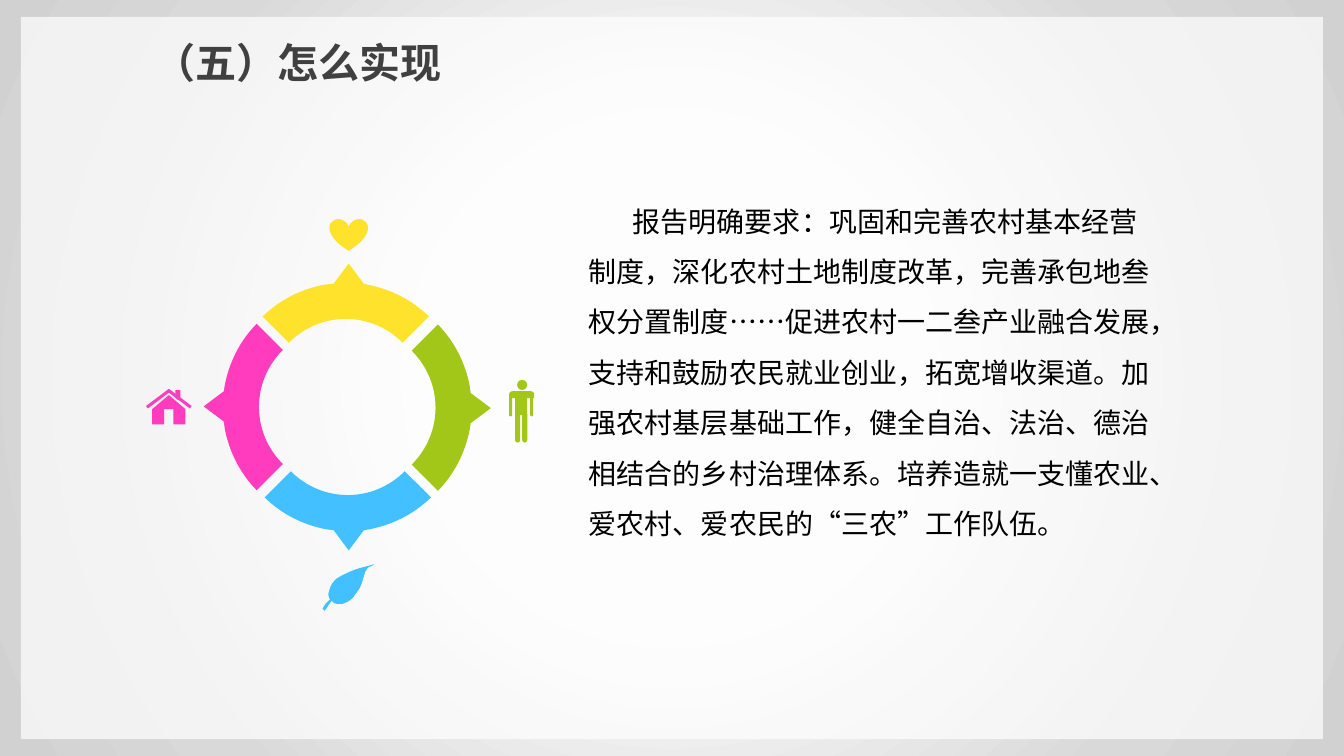
"""Build the rural policy slide: a four-part ring with icons beside a paragraph."""
from lxml import etree
from pptx import Presentation
from pptx.dml.color import RGBColor
from pptx.enum.shapes import MSO_SHAPE
from pptx.oxml import parse_xml
from pptx.oxml.ns import nsdecls, qn
from pptx.util import Pt

RECT = MSO_SHAPE.RECTANGLE
OVAL = MSO_SHAPE.OVAL
HEART = MSO_SHAPE.HEART
TRIANGLE = MSO_SHAPE.ISOSCELES_TRIANGLE
ROUNDED_TOP = MSO_SHAPE.ROUND_2_SAME_RECTANGLE
SNIPPED = MSO_SHAPE.SNIP_1_RECTANGLE

COLORS = {
    "yellow": "FFE22C", "green": "A3C718", "blue": "42C0FF", "pink": "FF3BBE",
    "white": "FFFFFF", "title": "404040", "body": "000000",
}
BACKDROP_STOPS = [(30, "FBFBFB"), (74, "D9D9D9"), (100, "D1D1D1")]
SLIDE_WIDTH, SLIDE_HEIGHT = 960, 540

RING = [
    ("green", (248.4, 291.2), (1, 0), 0.3),
    ("pink", (247.7, 290.7), (-1, 0), 0.4),
    ("blue", (248.4, 290.9), (0, 1), -0.7),
    ("yellow", (247, 290.5), (0, -1), 2.1),
]
PERSON = [
    (OVAL, (369.4, 271.4, 7.2, 7.2), 0),
    (ROUNDED_TOP, (363.6, 279.4, 18, 5), 0),
    (RECT, (367.9, 284.4, 8.6, 12.2), 0),
    (ROUNDED_TOP, (367.9, 295.9, 3.6, 20.2), 180),
    (ROUNDED_TOP, (373, 295.9, 3.6, 20.2), 180),
    (ROUNDED_TOP, (363.6, 283, 2.2, 14.4), 180),
    (ROUNDED_TOP, (378.7, 283, 2.2, 14.4), 180),
]
HOUSE = [
    (RECT, (103, 283.7, 20.2, 2.2), 323),
    (RECT, (118.1, 283.7, 20.2, 2.2), 37),
    (TRIANGLE, (108.7, 282.2, 23.8, 10.1), 0),
    (RECT, (108.7, 292.3, 8.6, 10.8), 0),
    (RECT, (123.8, 292.3, 8.6, 10.8), 0),
    (SNIPPED, (125.3, 278.6, 3.6, 7.2), 180),
]
LEAF_EDGE = [
    ((267.8, 403.2), (264.2, 404.6), (262.8, 405.4)),
    ((262.1, 406.1), (262.1, 406.1), (260.6, 409)),
    ((259.9, 411.1), (258.5, 416.9), (257, 419.8)),
    ((254.9, 422.6), (253.4, 425.5), (251.3, 427.7)),
]
LEAF_TIP = ((258.5, 405.4), (265, 403.9), (267.1, 403.2))
LEAF_BLADE = [
    ((235.4, 427.7),),
    ((234.7, 425.5), (234, 424.8), (235.4, 421.2)),
    ((236.2, 417.6), (238.3, 415.4), (240.5, 413.3)),
    ((242.6, 411.8), (249.8, 408.2), (254.2, 406.8)),
    LEAF_TIP,
    *LEAF_EDGE,
    ((249.1, 429.1), (246.2, 430.6), (244.1, 431.3)),
    ((241.9, 432), (239.8, 431.3), (238.3, 430.6)),
    ((236.9, 429.8), (236.2, 429.1), (235.4, 427.7)),
]
LEAF_STEM = [
    ((237.6, 427.7),),
    ((237.6, 428.4), (234.7, 432), (234, 433.4)),
    ((232.6, 434.9), (232.6, 436.3), (231.8, 436.3)),
    ((231.1, 436.3), (230.4, 435.6), (230.4, 434.9)),
    ((230.4, 434.2), (231.8, 432.7), (232.6, 431.3)),
    ((234, 429.8), (236.2, 427.7), (236.9, 427)),
    ((237.6, 427), (238.3, 426.2), (237.6, 427.7)),
]
LEAF_HALF = [
    ((267.1, 403.2),),
    *LEAF_EDGE,
    ((248.4, 429.8),), ((244.8, 431.3),), ((241.9, 431.3),),
    ((248.4, 409.7),), ((250.6, 408.2),),
    ((252, 407.5), (253.4, 407.5), (254.2, 406.8)),
    LEAF_TIP,
]
LEAF_VEIN = [
    ((236.2, 427),),
    ((237.6, 425.5), (241.2, 421.2), (243.4, 419)),
    ((245.5, 416.9), (249.8, 414), (250.6, 414)),
    ((250.6, 414), (247, 416.9), (245.5, 418.3)),
    ((244.1, 420.5), (241.2, 422.6), (239.8, 424.8)),
    ((239, 426.2), (237.6, 427.7), (236.9, 428.4)),
    ((236.2, 428.4), (235.4, 428.4), (236.2, 427)),
]
TITLE = "（五）怎么实现"
BODY = (
    "报告明确要求：巩固和完善农村基本经营制度，深化农村土地制度改革，"
    "完善承包地叁权分置制度……促进农村一二叁产业融合发展，"
    "支持和鼓励农民就业创业，拓宽增收渠道。加强农村基层基础工作，"
    "健全自治、法治、德治相结合的乡村治理体系。"
    "培养造就一支懂农业、爱农村、爱农民的“三农”工作队伍。"
)


def paint(shape, color):
    shape.shadow.inherit = False
    shape.fill.solid()
    shape.fill.fore_color.rgb = RGBColor.from_string(COLORS[color])
    shape.line.fill.background()


def add_preset(shapes, kind, box, color, rotation=0):
    shape = shapes.add_shape(kind, *map(Pt, box))
    paint(shape, color)
    shape.rotation = rotation
    if kind in (ROUNDED_TOP, SNIPPED):
        shape.adjustments[0] = 0.5
    return shape


def add_icon(shapes, parts, color):
    icon = shapes.add_group_shape()
    for kind, box, rotation in parts:
        add_preset(icon.shapes, kind, box, color, rotation)


def add_outline(shapes, strokes, color):
    """Draw strokes of one point as lines and of three points as Bezier curves."""
    corners = [(Pt(x), Pt(y)) for stroke in strokes for x, y in stroke]
    builder = shapes.build_freeform(*corners[0])
    builder.add_line_segments(corners[1:], close=True)
    outline = builder.convert_to_shape()
    paint(outline, color)
    segments = iter(list(outline._element.iter(qn("a:lnTo"))))
    for stroke in strokes[1:]:
        pieces = [next(segments) for _ in stroke]
        if len(pieces) == 3:
            curve = etree.Element(qn("a:cubicBezTo"))
            pieces[0].addprevious(curve)
            for piece in pieces:
                curve.append(piece[0])
                piece.getparent().remove(piece)


def ring_segment(center, direction, tip_shift):
    """Turn one pointed segment to face outward from the ring's center."""
    def place(outward, across):
        (x, y), (dx, dy) = center, direction
        return x + outward * dx - across * dy, y + outward * dy + across * dx

    strokes = [
        [(64.4, -59.4)],
        [(76.7, -46.8), (83.9, -31.7), (87.1, -15.8)],
        [(87.8, tip_shift - 10.8)], [(102.2, tip_shift)], [(87.8, tip_shift + 10.8)],
        [(87.1, 15.8)],
        [(83.9, 31.7), (76.7, 46.8), (64.4, 59.4)],
        [(45.7, 40.7)],
        [(68.4, 18), (68.4, -18), (45.7, -40.7)],
    ]
    return [[place(*point) for point in stroke] for stroke in strokes]


def add_backdrop(shapes):
    backdrop = add_preset(shapes, RECT, (0, 0, SLIDE_WIDTH, SLIDE_HEIGHT), "white")
    stops = "".join(
        f'<a:gs pos="{position * 1000}"><a:srgbClr val="{color}"/></a:gs>'
        for position, color in BACKDROP_STOPS)
    gradient = parse_xml(
        f'<a:gradFill {nsdecls("a")} rotWithShape="1"><a:gsLst>{stops}</a:gsLst>'
        '<a:path path="circle"><a:fillToRect l="50000" t="50000" r="50000" b="50000"/>'
        '</a:path></a:gradFill>')
    properties = backdrop.fill._xPr
    properties.replace(properties.find(qn("a:solidFill")), gradient)
    panel = add_preset(shapes, RECT, (15, 12, 930, 516), "white")
    tint = panel.fill._xPr.find(qn("a:solidFill"))[0]
    etree.SubElement(tint, qn("a:alpha")).set("val", "70000")


def add_text(shapes, box, text, size, font, color, spacing, wrap=True, bold=False, indent=0):
    frame = shapes.add_textbox(*map(Pt, box)).text_frame
    frame.word_wrap = wrap
    paragraph = frame.paragraphs[0]
    paragraph.text = text
    paragraph.line_spacing = Pt(spacing)
    paragraph.font.size = Pt(size)
    paragraph.font.name = font
    paragraph.font.bold = bold
    paragraph.font.color.rgb = RGBColor.from_string(COLORS[color])
    properties = paragraph._p.get_or_add_pPr()
    properties.set("indent", str(Pt(indent)))
    latin = properties.find(qn("a:defRPr")).find(qn("a:latin"))
    latin.addnext(etree.Element(qn("a:ea"), typeface="Noto Sans CJK SC"))


def main():
    deck = Presentation()
    deck.slide_width, deck.slide_height = Pt(SLIDE_WIDTH), Pt(SLIDE_HEIGHT)
    shapes = deck.slides.add_slide(deck.slide_layouts[6]).shapes
    add_backdrop(shapes)
    for color, center, direction, tip_shift in RING:
        add_outline(shapes, ring_segment(center, direction, tip_shift), color)
    add_preset(shapes, HEART, (235.4, 156.2, 27.4, 23), "yellow")
    add_icon(shapes, PERSON, "green")
    add_icon(shapes, HOUSE, "pink")
    leaf = shapes.add_group_shape()
    for strokes in (LEAF_BLADE, LEAF_STEM, LEAF_HALF, LEAF_VEIN):
        add_outline(leaf.shapes, strokes, "blue")
    add_text(shapes, (413.5, 130.2, 423.4, 262), BODY, 20, "Noto Sans CJK SC",
             "body", 36, indent=31.4)
    add_text(shapes, (103.2, 23, 222.5, 42.5), TITLE, 29.3, "Arial",
             "title", 35.5, wrap=False, bold=True)
    deck.save("out.pptx")


if __name__ == "__main__":
    main()
